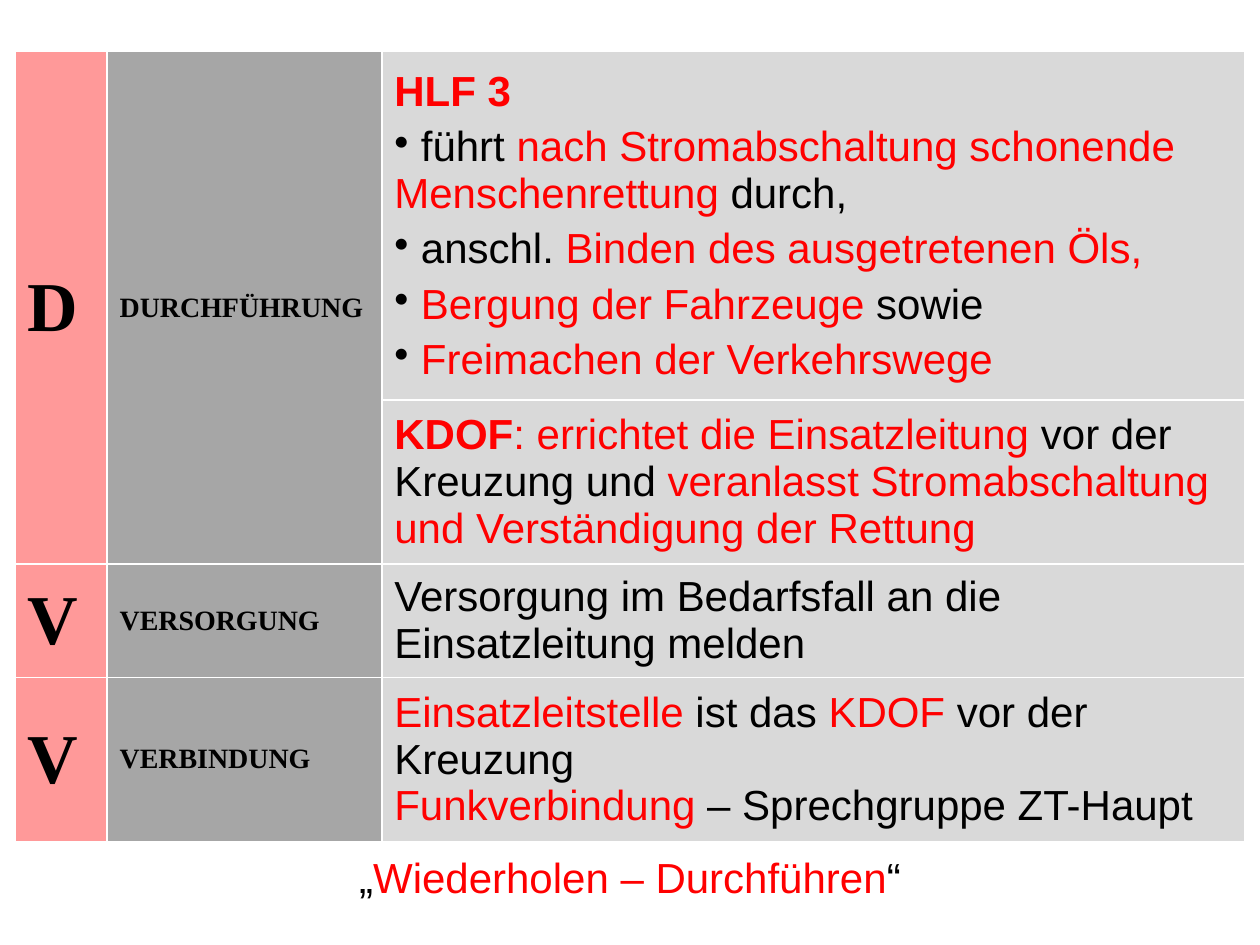
from dataclasses import dataclass

from lxml.etree import SubElement
from pptx import Presentation
from pptx.dml.color import RGBColor as RGB
from pptx.enum.text import MSO_ANCHOR as ANCHOR, MSO_AUTO_SIZE as AUTO, PP_ALIGN as ALIGN
from pptx.oxml import parse_xml
from pptx.oxml.ns import nsdecls, qn
from pptx.util import Inches, Pt


@dataclass(frozen=True)
class Theme:
    ink: str = "000000"
    red: str = "FF0000"
    pink: str = "FF9999"
    mid_grey: str = "A6A6A6"
    light_grey: str = "D9D9D9"
    rule: str = "FFFFFF"
    rule_width: float = 1
    body_font: str = "Arial"
    label_font: str = "Times New Roman"
    letter_size: int = 40
    label_size: int = 16
    body_size: int = 24
    para_gap: float = 4.8


@dataclass
class Para:
    runs: list
    gap: bool = False
    bullet: bool = False


def ink(text, bold=False):
    return text, "ink", bold


def red(text, bold=False):
    return text, "red", bold


class SlideBuilder:
    def __init__(self, prs, theme):
        self.t = theme
        self.w, self.h = prs.slide_width, prs.slide_height
        self.s = prs.slides.add_slide(prs.slide_layouts[6])

    def box(self, x, y, w, h):
        """Turn shares of the slide's size into lengths."""
        return int(x * self.w), int(y * self.h), int(w * self.w), int(h * self.h)

    def add_paras(self, tf, paras, font, size, align=ALIGN.LEFT):
        for i, para in enumerate(paras):
            p = tf.paragraphs[0] if i == 0 else tf.add_paragraph()
            p.alignment = align
            if para.gap:
                p.space_before = Pt(self.t.para_gap)
            if para.bullet:
                pPr = p._p.get_or_add_pPr()
                pPr.set("marL", "0")
                pPr.set("indent", "0")
                SubElement(pPr, qn("a:buChar"), char="•")
            for text, color, bold in para.runs:
                r = p.add_run()
                r.text = text
                r.font.name, r.font.size, r.font.bold = font, Pt(size), bold
                r.font.color.rgb = RGB.from_string(getattr(self.t, color))

    def caption(self, box, para):
        tf = self.s.shapes.add_textbox(*self.box(*box)).text_frame
        tf.word_wrap = True
        tf.auto_size = AUTO.SHAPE_TO_FIT_TEXT
        self.add_paras(tf, [para], self.t.body_font, self.t.body_size, ALIGN.CENTER)

    def table(self, box, cols, rows):
        """Add an empty table; cols and rows are relative weights."""
        x, y, w, h = self.box(*box)
        tbl = self.s.shapes.add_table(len(rows), len(cols), x, y, w, h).table
        tbl.first_row = tbl.horz_banding = False
        for col, weight in zip(tbl.columns, cols):
            col.width = int(w * weight / sum(cols))
        for row, weight in zip(tbl.rows, rows):
            row.height = int(h * weight / sum(rows))
        for cell in tbl.iter_cells():
            self.borders(cell)
        return tbl

    def borders(self, cell):
        tcPr = cell._tc.get_or_add_tcPr()
        for i, side in enumerate(("lnL", "lnR", "lnT", "lnB")):
            tcPr.insert(i, parse_xml(
                f'<a:{side} {nsdecls("a")} w="{Pt(self.t.rule_width)}"><a:solidFill>'
                f'<a:srgbClr val="{self.t.rule}"/></a:solidFill></a:{side}>'))

    def cell(self, cell, fill, paras, font, size):
        cell.fill.solid()
        cell.fill.fore_color.rgb = RGB.from_string(fill)
        cell.vertical_anchor = ANCHOR.MIDDLE
        self.add_paras(cell.text_frame, paras, font, size)

    def section(self, tbl, row, letter, label, bodies):
        """Fill a letter, its label and one body cell per row."""
        t = self.t
        heads = ((letter, t.pink, t.letter_size), (label, t.mid_grey, t.label_size))
        for col, (text, fill, size) in enumerate(heads):
            head = tbl.cell(row, col)
            if len(bodies) > 1:
                head.merge(tbl.cell(row + len(bodies) - 1, col))
            self.cell(head, fill, [Para([ink(text, True)])], t.label_font, size)
        for i, paras in enumerate(bodies):
            self.cell(tbl.cell(row + i, 2), t.light_grey, paras, t.body_font, t.body_size)


EXECUTION = [
    Para([red("HLF 3", True)], gap=True),
    Para([ink(" führt"), red(" nach Stromabschaltung schonende Menschenrettung"),
          ink(" durch,")], gap=True, bullet=True),
    Para([ink(" anschl. "), red("Binden des ausgetretenen Öls,")], gap=True, bullet=True),
    Para([ink(" "), red("Bergung der Fahrzeuge"), ink(" sowie")], gap=True, bullet=True),
    Para([ink(" "), red("Freimachen der Verkehrswege")], gap=True, bullet=True),
]
COMMAND = [
    Para([red("KDOF", True), red(": errichtet die Einsatzleitung "),
          ink("vor der Kreuzung und "),
          red("veranlasst Stromabschaltung und Verständigung der Rettung")]),
]
SUPPLY = [Para([ink("Versorgung im Bedarfsfall an die Einsatzleitung melden")])]
CONTACT = [
    Para([red("Einsatzleitstelle"), ink(" ist das "), red("KDOF "),
          ink("vor der Kreuzung")], gap=True),
    Para([red("Funkverbindung "), ink("– Sprechgruppe ZT-Haupt")]),
]
SECTIONS = [
    ("D", "DURCHFÜHRUNG", [EXECUTION, COMMAND]),
    ("V", "VERSORGUNG", [SUPPLY]),
    ("V", "VERBINDUNG", [CONTACT]),
]


def main():
    prs = Presentation()
    prs.slide_width, prs.slide_height = Inches(10), Inches(7.5)
    b = SlideBuilder(prs, Theme())
    margin = 0.12 / 10
    width = 1 - 2 * margin

    # Closing call below the table
    b.caption((margin, 6.71 / 7.5, width, 0.07),
              Para([ink("„"), red("Wiederholen – Durchführen"), ink("“")]))

    # Order table
    rows = (2.76, 1.3, 0.9, 1.3)
    tbl = b.table((margin, 0.41 / 7.5, width, sum(rows) / 7.5),
                  cols=(0.73, 2.18, 6.85), rows=rows)
    row = 0
    for letter, label, bodies in SECTIONS:
        b.section(tbl, row, letter, label, bodies)
        row += len(bodies)

    prs.save("out.pptx")


if __name__ == "__main__":
    main()
